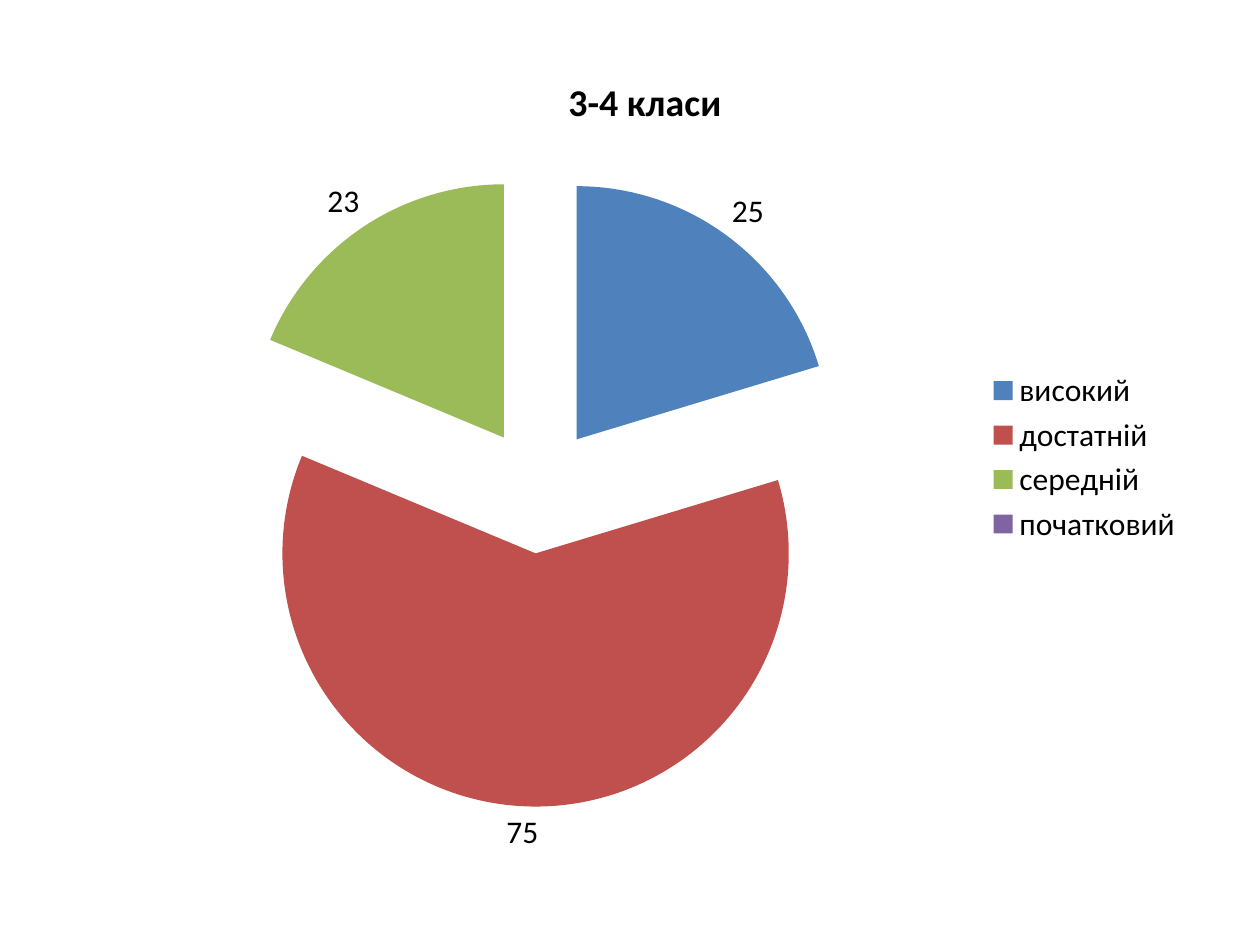
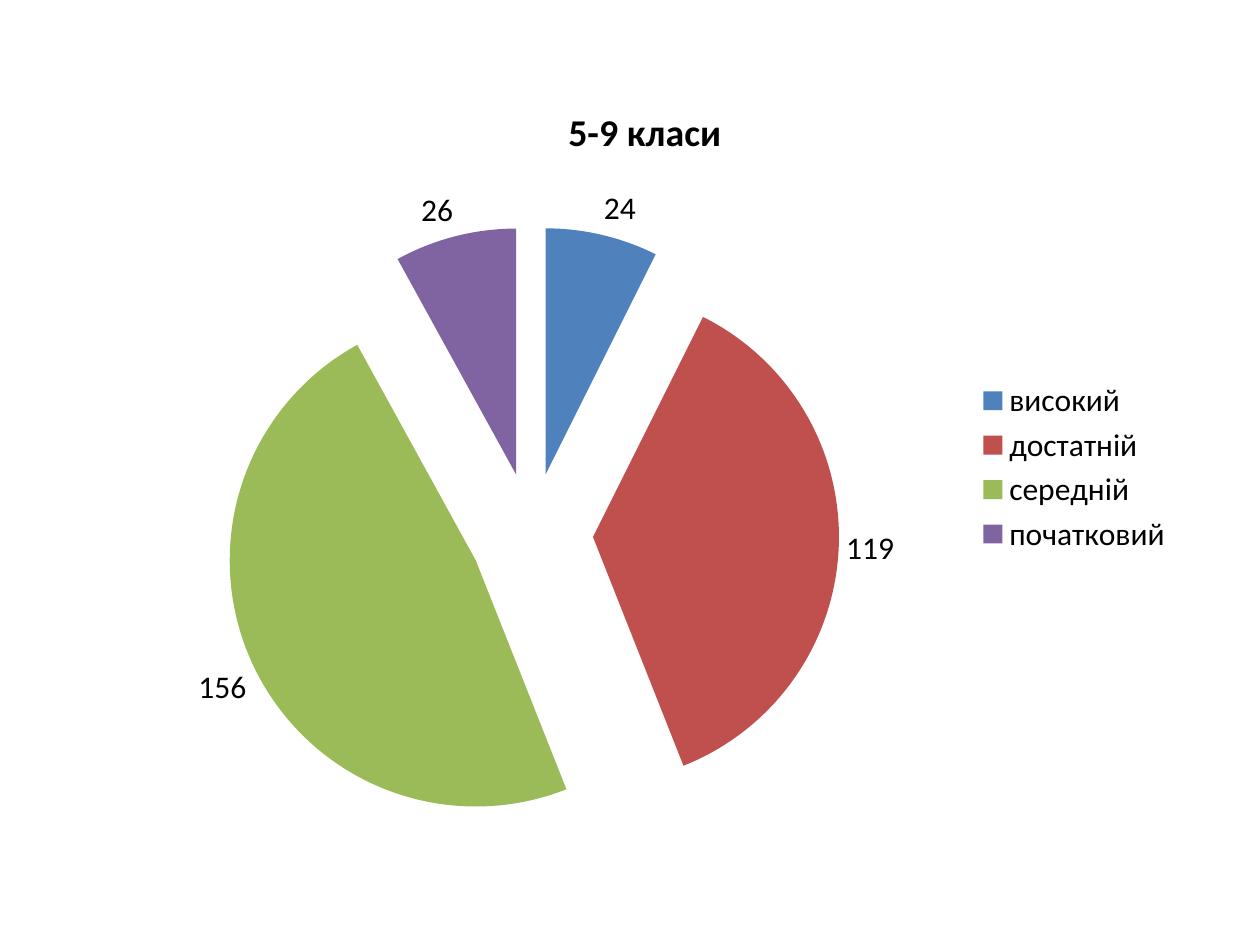
from lxml.etree import SubElement
from pptx import Presentation
from pptx.chart.data import CategoryChartData
from pptx.dml.color import RGBColor
from pptx.enum.chart import XL_CHART_TYPE, XL_LABEL_POSITION, XL_LEGEND_POSITION
from pptx.oxml.ns import qn
from pptx.util import Inches, Pt

# Content: achievement levels with their colours, then one pie per slide
LEVELS = {
    "високий": "4F81BD",
    "достатній": "C0504D",
    "середній": "9BBB59",
    "початковий": "8064A2",
}
PIES = [
    # title, pupils per level, (left, top, width, height) in inches
    ("3-4 класи", (25, 75, 23, None), (0.75, 0.36, 8.74, 6.54)),
    ("5-9 класи", (24, 119, 156, 26), (0.83, 0.6, 8.58, 6.22)),
]

# Shared style
FONT, TEXT_COLOUR = "Calibri", "000000"
TEXT_SIZE, TITLE_SIZE = 18, 21.6
EXPLOSION = 25


def colour(hex_code):
    return RGBColor.from_string(hex_code)


def style_font(font, size, bold=False):
    font.name = FONT
    font.size = Pt(size)
    font.bold = bold
    font.color.rgb = colour(TEXT_COLOUR)


def explode(series, percent):
    """Pull all slices of a pie apart."""
    element = series._element
    explosion = SubElement(element, qn("c:explosion"), val=str(percent))
    element.find(qn("c:tx")).addnext(explosion)


def add_pie(page, title, counts, frame):
    data = CategoryChartData()
    data.categories = list(LEVELS)
    data.add_series(title, counts)
    chart = page.shapes.add_chart(
        XL_CHART_TYPE.PIE, *map(Inches, frame), data).chart
    style_font(chart.font, TEXT_SIZE)

    # Title and legend
    chart.has_title = True
    para = chart.chart_title.text_frame.paragraphs[0]
    para.text = title
    style_font(para.font, TITLE_SIZE, bold=True)
    chart.has_legend = True
    chart.legend.position = XL_LEGEND_POSITION.RIGHT
    chart.legend.include_in_layout = False

    # Slices
    plot = chart.plots[0]
    plot.vary_by_categories = True
    series = plot.series[0]
    explode(series, EXPLOSION)
    for index, hex_code in enumerate(LEVELS.values()):
        fill = series.points[index].format.fill
        fill.solid()
        fill.fore_color.rgb = colour(hex_code)

    # Value labels
    labels = series.data_labels
    labels.show_value = True
    labels.position = XL_LABEL_POSITION.OUTSIDE_END
    style_font(labels.font, TEXT_SIZE)


def main():
    deck = Presentation()
    deck.slide_width, deck.slide_height = Inches(10), Inches(7.5)
    blank = deck.slide_layouts.get_by_name("Blank")
    for pie in PIES:
        add_pie(deck.slides.add_slide(blank), *pie)
    deck.save("out.pptx")


if __name__ == "__main__":
    main()
